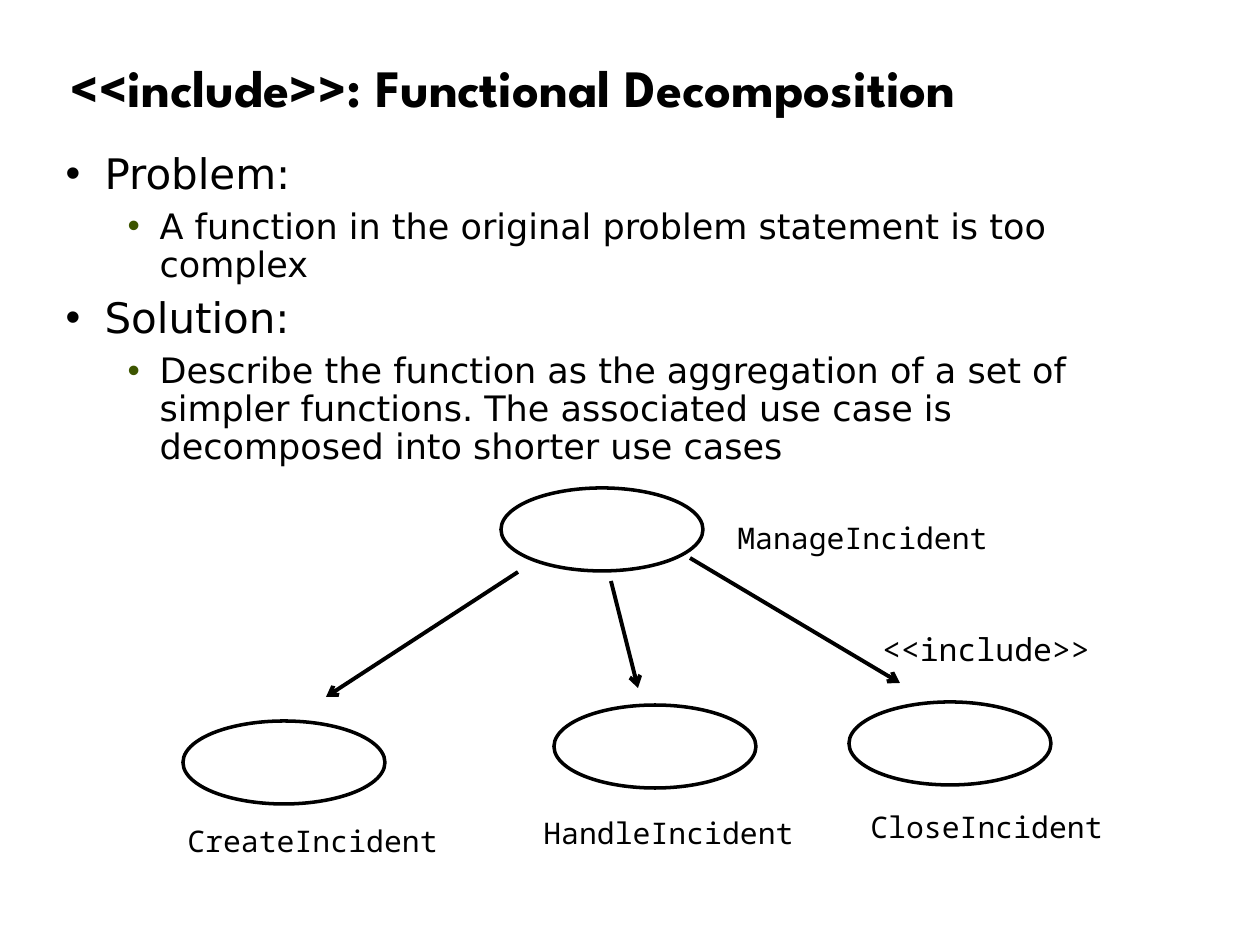
from lxml.etree import SubElement
from pptx import Presentation
from pptx.dml.color import RGBColor
from pptx.enum.shapes import MSO_CONNECTOR, MSO_SHAPE
from pptx.enum.text import MSO_ANCHOR, MSO_AUTO_SIZE, PP_ALIGN
from pptx.oxml.ns import qn
from pptx.util import Emu, Pt

# Content
TITLE = "<<include>>: Functional Decomposition"
POINTS = [
    (0, "Problem:"),
    (1, "A function in the original problem statement is too complex"),
    (0, "Solution:"),
    (1, "Describe the function as the aggregation of a set of simpler functions. "
        "The associated use case is decomposed into shorter use cases"),
]
# Use case: name, ellipse left/top, label left/top/width
PARENT = ("ManageIncident", (501, 488), (725, 514, 276))
PARTS = [
    ("CreateIncident", (183, 721), (175, 817, 276)),
    ("HandleIncident", (554, 705), (531, 809, 276)),
    ("CloseIncident", (849, 702), (858, 803, 264)),
]
ARROWS = [(518, 572, 326, 697), (611, 581, 638, 688), (690, 558, 900, 683)]
STEREOTYPE = "<<include>>"

BLACK = RGBColor(0x00, 0x00, 0x00)
OLIVE = RGBColor(0x3D, 0x55, 0x00)
HEAD_FONT, BODY_FONT, CODE_FONT = "League Spartan", "DejaVu Sans", "Noto Sans Mono"
# Per list level: text size, left margin, hanging indent, bullet colour
LEVELS = [(24, 39, 39, BLACK), (20, 94, 32, OLIVE)]
USE_CASE_SIZE = (202, 83)
LABEL_HEIGHT = 48


def px(length):
    return Emu(round(length * 914400 / 126))


def place(shape, *box):
    shape.left, shape.top, shape.width, shape.height = map(px, box)


def style(paragraph, font_name, size, bold=False):
    for run in paragraph.runs:
        font = run.font
        font.name, font.size, font.bold = font_name, Pt(size), bold
        font.color.rgb = BLACK


def add_label(shapes, text, box, size, margins=True):
    label = shapes.add_textbox(*map(px, box))
    frame = label.text_frame
    frame.word_wrap = False
    frame.auto_size = MSO_AUTO_SIZE.SHAPE_TO_FIT_TEXT
    if not margins:
        frame.margin_left = frame.margin_right = 0
        frame.margin_top = frame.margin_bottom = 0
    frame.text = text
    style(frame.paragraphs[0], CODE_FONT, size)


def add_use_case(shapes, name, corner, label_box):
    ellipse = shapes.add_shape(MSO_SHAPE.OVAL, *map(px, corner + USE_CASE_SIZE))
    ellipse.shadow.inherit = False
    ellipse.fill.background()
    ellipse.line.color.rgb = BLACK
    ellipse.line.width = Pt(2)
    add_label(shapes, name, label_box + (LABEL_HEIGHT,), 17)


def add_arrow(shapes, ends):
    arrow = shapes.add_connector(MSO_CONNECTOR.STRAIGHT, *map(px, ends))
    arrow.line.color.rgb = BLACK
    arrow.line.width = Pt(2.25)
    SubElement(arrow.line._get_or_add_ln(), qn("a:tailEnd"), type="arrow")
    SubElement(arrow._element.spPr, qn("a:effectLst"))


def format_point(paragraph, level):
    size, margin, hanging, bullet_color = LEVELS[level]
    paragraph.level = level
    paragraph.alignment = PP_ALIGN.LEFT
    paragraph.line_spacing = 0.9
    style(paragraph, BODY_FONT, size)
    props = paragraph._p.get_or_add_pPr()
    props.set("marL", str(px(margin)))
    props.set("indent", str(-px(hanging)))
    before = SubElement(props, qn("a:spcBef"))
    SubElement(before, qn("a:spcPct"), val="30000")
    color = SubElement(props, qn("a:buClr"))
    SubElement(color, qn("a:srgbClr"), val=str(bullet_color))
    SubElement(props, qn("a:buChar"), char="•")


def main():
    deck = Presentation()
    deck.slide_width, deck.slide_height = px(1260), px(945)
    slide = deck.slides.add_slide(deck.slide_layouts[1])

    # Title
    title = slide.shapes.title
    place(title, 58, 31, 1124, 118)
    heading = title.text_frame
    heading.text = TITLE
    heading.vertical_anchor = MSO_ANCHOR.MIDDLE
    heading.auto_size = MSO_AUTO_SIZE.NONE
    heading.paragraphs[0].alignment = PP_ALIGN.LEFT
    heading.paragraphs[0].line_spacing = 0.9
    style(heading.paragraphs[0], HEAD_FONT, 30, bold=True)

    # Problem and solution list
    body = slide.placeholders[1]
    place(body, 53, 147, 1138, 678)
    points = body.text_frame
    points.auto_size = MSO_AUTO_SIZE.NONE
    points.text = "\n".join(text for _, text in POINTS)
    for paragraph, (level, _) in zip(points.paragraphs, POINTS):
        format_point(paragraph, level)

    # Use case diagram: the parent, then the included parts
    add_use_case(slide.shapes.add_group_shape().shapes, *PARENT)
    included = slide.shapes.add_group_shape().shapes
    for part in PARTS:
        add_use_case(included, *part)
    for ends in ARROWS:
        add_arrow(included, ends)
    add_label(included, STEREOTYPE, (882, 630, 209, 38), 18, margins=False)

    deck.save("out.pptx")


if __name__ == "__main__":
    main()
